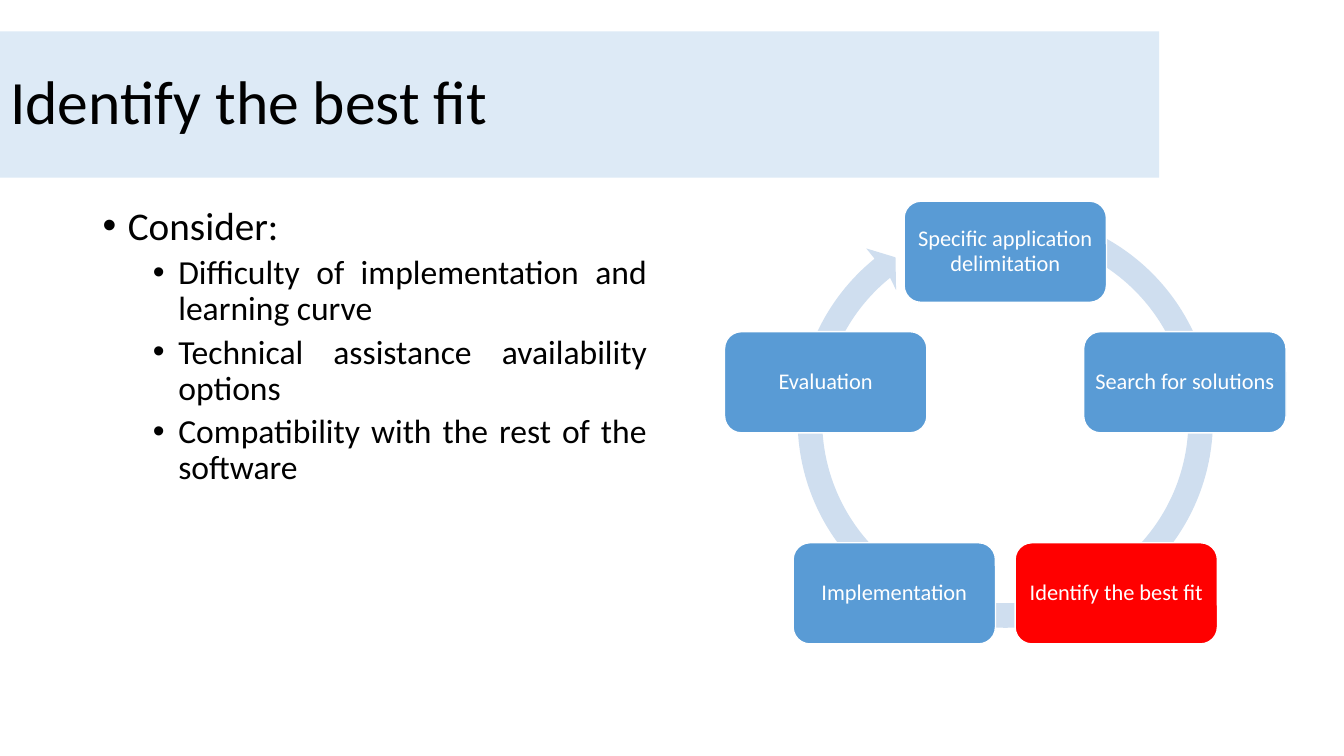
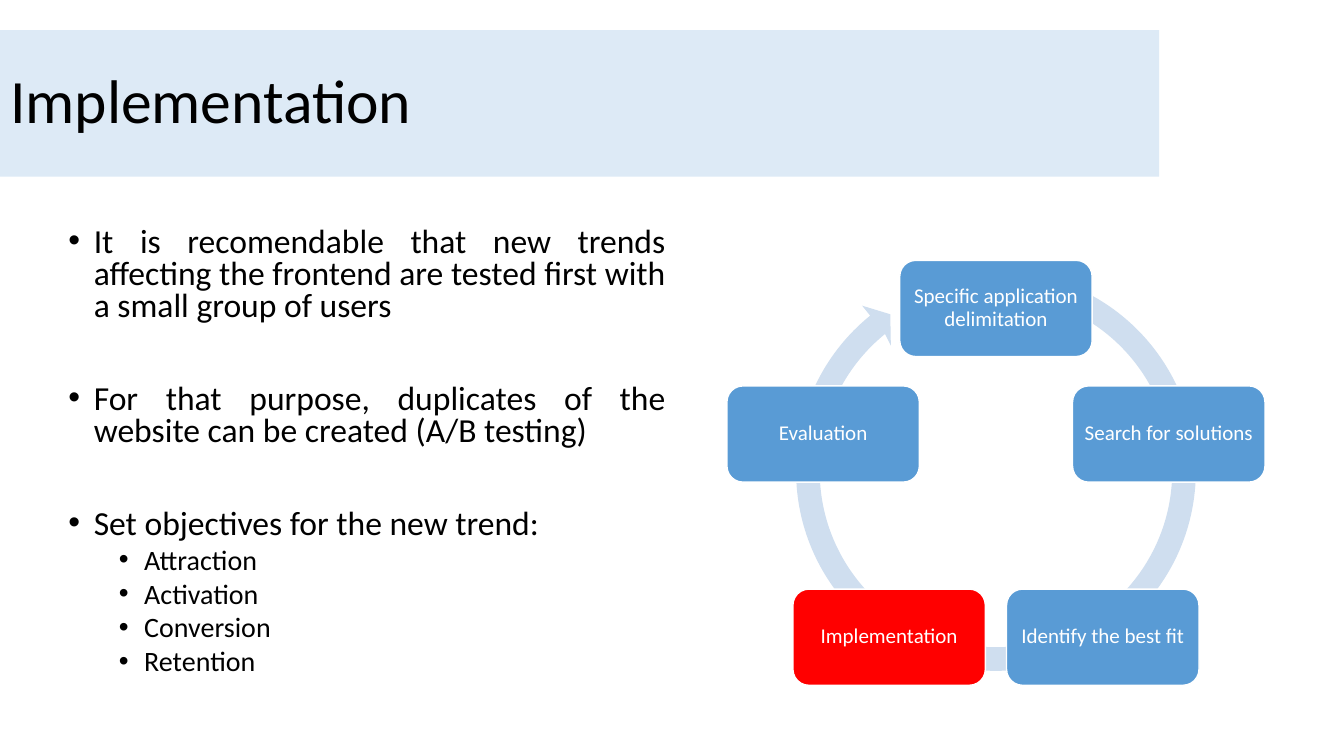
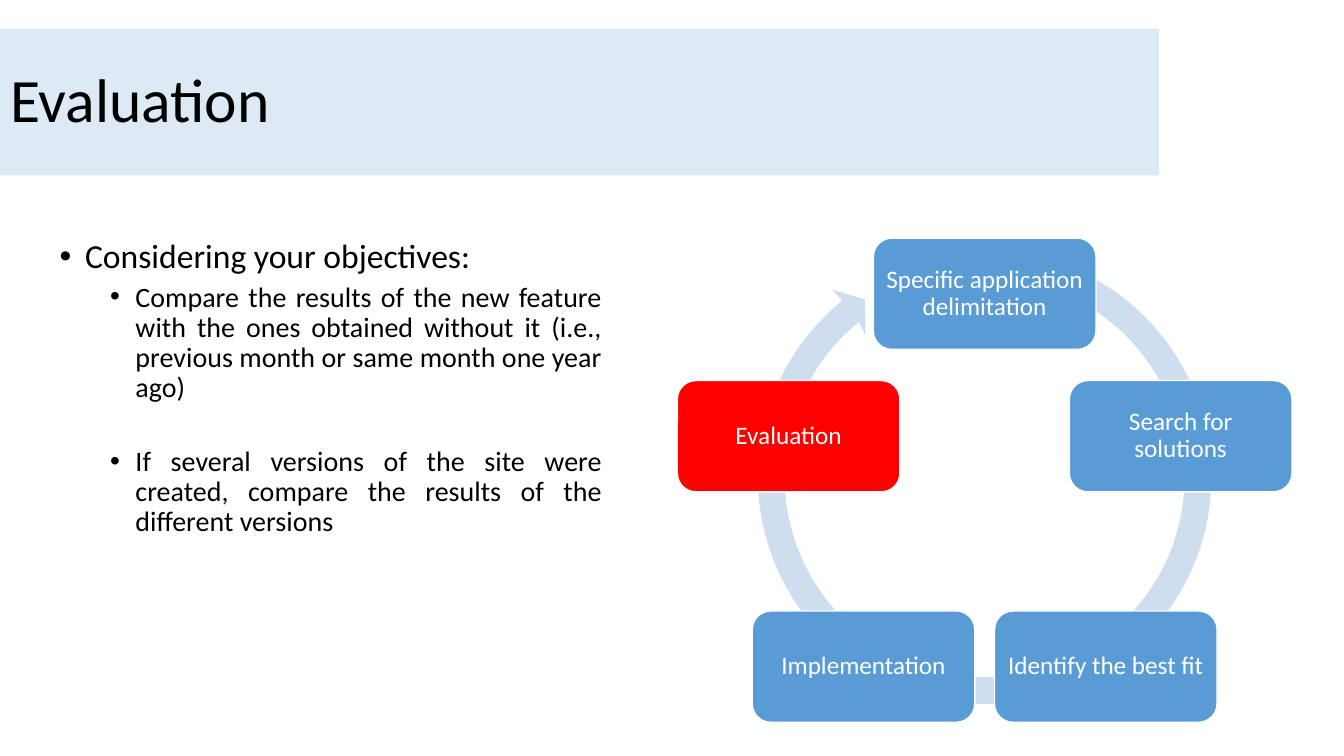
import math

import pptx
import pptx.dml.color
import pptx.enum.shapes
import pptx.enum.text
import pptx.oxml.ns
import pptx.util
from lxml import etree

Cm = pptx.util.Cm
Pt = pptx.util.Pt
qn = pptx.oxml.ns.qn

# Shared style
FONT = "Calibri"
BLACK = "000000"
WHITE = "FFFFFF"
BAND = "DDEAF6"
NODE = "599BD5"
ACTIVE = "FF0000"
RING = "CFDEEF"
STEPS = ["Specific application delimitation", "Search for solutions",
         "Identify the best fit", "Implementation", "Evaluation"]

# Ring proportions, as multiples of the radius through the node centres
RING_HALF_SPAN = 1.17
RING_OUTER, RING_MIDDLE, RING_INNER = 1.1, 1.04, 0.97
BARB_OUTER, BARB_INNER = 1.17, 0.9
RING_ANGLES = [19, 90, 180, 270, 321]
ARROW_TIP = 326


def rgb(value):
    return pptx.dml.color.RGBColor.from_string(value)


def place(shape, left, top, width, height):
    shape.left, shape.top = Cm(left), Cm(top)
    shape.width, shape.height = Cm(width), Cm(height)


def paint(shape, color):
    shape.fill.solid()
    shape.fill.fore_color.rgb = rgb(color)


def style_paragraph(paragraph, size, color, alignment, line_spacing=0.9, space_before=0):
    paragraph.alignment = alignment
    paragraph.line_spacing = line_spacing
    paragraph.space_before = Pt(space_before)
    paragraph.font.name = FONT
    paragraph.font.size = Pt(size)
    paragraph.font.color.rgb = rgb(color)


def add_bullet(paragraph, level):
    paragraph.level = level
    properties = paragraph._p.get_or_add_pPr()
    properties.set("marL", str(Cm(0.64 + 1.27 * level)))
    properties.set("indent", str(-Cm(0.64)))
    for tag, name, value in (("a:buFont", "typeface", "Arial"), ("a:buChar", "char", "•")):
        etree.SubElement(properties, qn(tag)).set(name, value)


def fill_title(slide, text, top):
    """Title on its pale band."""
    title = slide.shapes.title
    place(title, 0, top, 29.21, 3.69)
    paint(title, BAND)
    frame = title.text_frame
    frame.text = text
    frame.auto_size = pptx.enum.text.MSO_AUTO_SIZE.NONE
    frame.vertical_anchor = pptx.enum.text.MSO_ANCHOR.MIDDLE
    style_paragraph(frame.paragraphs[0], 44, BLACK, pptx.enum.text.PP_ALIGN.LEFT)


def fill_body(slide, box, items, sizes, line_spacing):
    """Bulleted list; each item is (level, space before, text)."""
    body = slide.placeholders[1]
    place(body, *box)
    frame = body.text_frame
    frame.auto_size = pptx.enum.text.MSO_AUTO_SIZE.NONE
    frame.vertical_anchor = pptx.enum.text.MSO_ANCHOR.TOP
    for index, (level, space_before, text) in enumerate(items):
        paragraph = frame.add_paragraph() if index else frame.paragraphs[0]
        paragraph.text = text
        add_bullet(paragraph, level)
        style_paragraph(paragraph, sizes[level], BLACK,
                        pptx.enum.text.PP_ALIGN.JUSTIFY, line_spacing, space_before)


def polar(center_x, center_y, radius, degrees):
    """Point at an angle measured clockwise from the top."""
    angle = math.radians(degrees)
    return center_x + radius * math.sin(angle), center_y - radius * math.cos(angle)


def bend(segment, center, radius, start, end):
    """Turn a straight outline segment into a circular arc."""
    pull = 4 / 3 * math.tan(math.radians(end - start) / 4)
    turn = math.degrees(math.atan(pull))
    segment.tag = qn("a:cubicBezTo")
    for index, angle in enumerate((start + turn, end - turn)):
        x, y = polar(center, center, radius * math.hypot(1, pull), angle)
        control = etree.Element(qn("a:pt"), x=str(Cm(x)), y=str(Cm(y)))
        segment.insert(index, control)


def add_ring(slide, center_x, center_y, radius):
    """Circular arrow behind the nodes, in a square frame."""
    end = RING_ANGLES[-1]
    outline = [(RING_OUTER, angle) for angle in RING_ANGLES]
    outline += [(BARB_OUTER, end), (RING_MIDDLE, ARROW_TIP), (BARB_INNER, end - 1)]
    outline += [(RING_INNER, angle) for angle in reversed(RING_ANGLES)]
    half = RING_HALF_SPAN * radius
    left, top = center_x - half, center_y - half
    points = [polar(center_x, center_y, ratio * radius, angle) for ratio, angle in outline]
    points = [(Cm(x), Cm(y)) for x, y in points]
    builder = slide.shapes.build_freeform(*points[0])
    builder.add_line_segments(points[1:], close=True)
    ring = builder.convert_to_shape()
    ring.shadow.inherit = False
    paint(ring, RING)
    ring.line.fill.background()

    # Widen the frame to the square, then curve the segments of constant radius
    place(ring, left, top, 2 * half, 2 * half)
    geometry = next(ring._element.iter(qn("a:path")))
    geometry.set("w", str(ring.width))
    geometry.set("h", str(ring.height))
    for point, (x, y) in zip(geometry.iter(qn("a:pt")), points):
        point.set("x", str(x - ring.left))
        point.set("y", str(y - ring.top))
    segments = list(geometry.iter(qn("a:lnTo")))
    for segment, (ratio, start), (next_ratio, stop) in zip(segments, outline, outline[1:]):
        if ratio == next_ratio:
            bend(segment, half, ratio * radius, start, stop)


def add_node(slide, center_x, center_y, width, text, size, color):
    height = width / 2
    node = slide.shapes.add_shape(
        pptx.enum.shapes.MSO_SHAPE.ROUNDED_RECTANGLE,
        Cm(center_x - width / 2), Cm(center_y - height / 2), Cm(width), Cm(height))
    node.shadow.inherit = False
    paint(node, color)
    node.line.color.rgb = rgb(WHITE)
    node.line.width = Pt(1)
    frame = node.text_frame
    frame.word_wrap = True
    frame.vertical_anchor = pptx.enum.text.MSO_ANCHOR.MIDDLE
    frame.margin_left = frame.margin_right = Cm(0.17)
    frame.margin_top = frame.margin_bottom = Cm(0.17)
    frame.text = text
    style_paragraph(frame.paragraphs[0], size, WHITE, pptx.enum.text.PP_ALIGN.CENTER)


def add_cycle(slide, box, node_width, size, active):
    """Five steps evenly spaced on a circle, the active one highlighted."""
    left, top, width = box
    step_angle = 360 / len(STEPS)
    radius = (width - node_width) / 2 / math.sin(math.radians(step_angle))
    center_x = left + width / 2
    add_ring(slide, center_x, top - 0.05 + RING_HALF_SPAN * radius, radius)
    center_y = top + node_width / 4 + radius
    for index, step in enumerate(STEPS):
        x, y = polar(center_x, center_y, radius, index * step_angle)
        add_node(slide, x, y, node_width, step, size, ACTIVE if step == active else NODE)


def add_step_slide(presentation, step, title_top, body, cycle):
    slide = presentation.slides.add_slide(presentation.slide_layouts[1])
    fill_title(slide, step, title_top)
    fill_body(slide, **body)
    add_cycle(slide, active=step, **cycle)


SLIDES = [
    dict(
        step="Identify the best fit", title_top=0.79,
        body=dict(box=(2.33, 5.07, 14.23, 12.09), sizes=(28, 24), line_spacing=0.9, items=[
            (0, 0, "Consider:"),
            (1, 5, "Difficulty of implementation and learning curve"),
            (1, 5, "Technical assistance availability options"),
            (1, 5, "Compatibility with the rest of the software"),
        ]),
        cycle=dict(box=(18.26, 5.07, 14.15), node_width=5.1, size=16),
    ),
    dict(
        step="Implementation", title_top=0.76,
        body=dict(box=(1.47, 5.61, 15.56, 12.09), sizes=(24, 20), line_spacing=0.8, items=[
            (0, 0, "It is recomendable that new trends affecting the frontend "
                   "are tested first with a small group of users"),
            (0, 43, "For that purpose, duplicates of the website can be created (A/B testing)"),
            (0, 43, "Set objectives for the new trend:"),
            (1, 5, "Attraction"),
            (1, 5, "Activation"),
            (1, 5, "Conversion"),
            (1, 5, "Retention"),
        ]),
        cycle=dict(box=(18.32, 6.56, 13.56), node_width=4.85, size=15),
    ),
    dict(
        step="Evaluation", title_top=0.73,
        body=dict(box=(1.25, 5.91, 14.17, 11.18), sizes=(24, 20), line_spacing=0.9, items=[
            (0, 0, "Considering your objectives:"),
            (1, 5, "Compare the results of the new feature with the ones obtained "
                   "without it (i.e., previous month or same month one year ago)"),
            (1, 31, "If several versions of the site were created, "
                    "compare the results of the different versions"),
        ]),
        cycle=dict(box=(17.07, 6, 15.49), node_width=5.61, size=18),
    ),
]


def main():
    presentation = pptx.Presentation()
    presentation.slide_width, presentation.slide_height = Cm(33.87), Cm(19.05)
    for content in SLIDES:
        add_step_slide(presentation, **content)
    presentation.save("out.pptx")


if __name__ == "__main__":
    main()
